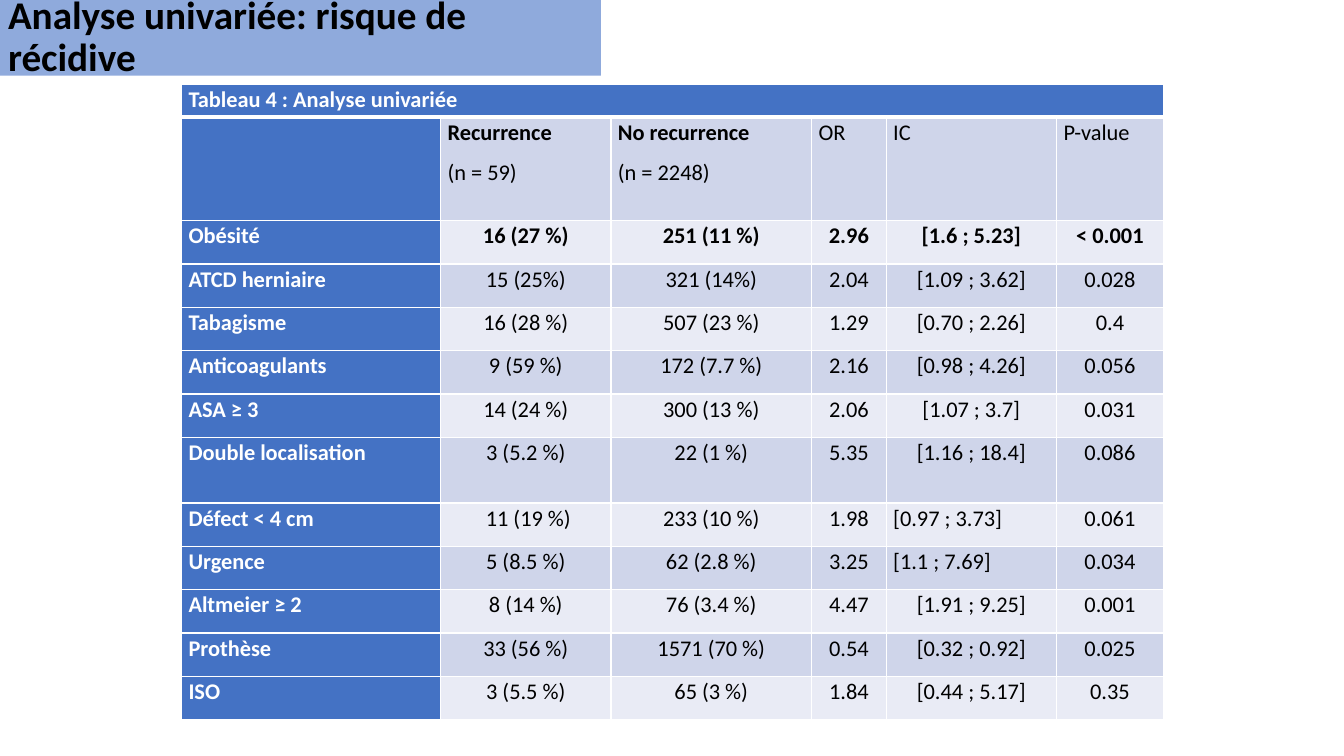
from pptx import Presentation
from pptx.dml.color import RGBColor
from pptx.enum.text import MSO_ANCHOR as Anchor, MSO_AUTO_SIZE as AutoSize, PP_ALIGN as Align
from pptx.oxml.ns import qn
from pptx.util import Inches, Pt
from lxml.etree import SubElement

TITLE = "Analyse univariée: risque de récidive"
CAPTION = "Tableau 4 : Analyse univariée"
HEADERS = ["", "Recurrence\n(n = 59)", "No recurrence\n(n = 2248)", "OR", "IC", "P-value"]
RESULTS = [
    ("Obésité", "16 (27 %)", "251 (11 %)", "2.96", "[1.6 ; 5.23]", "< 0.001"),
    ("ATCD herniaire", "15 (25%)", "321 (14%)", "2.04", "[1.09 ; 3.62]", "0.028"),
    ("Tabagisme", "16 (28 %)", "507 (23 %)", "1.29", "[0.70 ; 2.26]", "0.4"),
    ("Anticoagulants", "9 (59 %)", "172 (7.7 %)", "2.16", "[0.98 ; 4.26]", "0.056"),
    ("ASA ≥ 3", "14 (24 %)", "300 (13 %)", "2.06", "[1.07 ; 3.7]", "0.031"),
    ("Double localisation", "3 (5.2 %)", "22 (1 %)", "5.35", "[1.16 ; 18.4]", "0.086"),
    ("Défect < 4 cm", " 11 (19 %)", "233 (10 %)", "1.98", "[0.97 ; 3.73]", "0.061"),
    ("Urgence", "5 (8.5 %)", "62 (2.8 %)", "3.25", "[1.1 ; 7.69]", "0.034"),
    ("Altmeier ≥ 2", "8 (14 %)", "76 (3.4 %)", "4.47", "[1.91 ; 9.25]", "0.001"),
    ("Prothèse", "33 (56 %)", "1571 (70 %)", "0.54", "[0.32 ; 0.92]", "0.025"),
    ("ISO", "3 (5.5 %)", "65 (3 %)", "1.84", "[0.44 ; 5.17]", "0.35"),
]
SIGNIFICANT = "Obésité"
LEFT_INTERVALS = {"Défect < 4 cm", "Urgence"}
COLUMN_WIDTHS = [2.57, 1.69, 1.99, 0.74, 1.69, 1.06]
CAPTION_HEIGHT, HEADER_HEIGHT, ROW_HEIGHT = 0.32, 1.03, 0.43
TALL_ROWS = {"Double localisation": 0.65}
BLUE, WHITE, BLACK, TITLE_FILL = "4472C4", "FFFFFF", "000000", "8FAADC"
BANDS = ["E9EBF5", "CFD5EA"]
CELL_FORMAT = {"margin_left": Inches(0.07), "margin_right": Inches(0.07),
               "margin_top": 0, "margin_bottom": 0, "vertical_anchor": Anchor.TOP}


def apply(target, values):
    for name, value in values.items():
        setattr(target, name, value)


def paint(fill, color):
    fill.solid()
    fill.fore_color.rgb = RGBColor.from_string(color)


def write(para, text, size, color, bold):
    span = para.add_run()
    span.text = text
    apply(span.font, {"name": "Calibri", "size": Pt(size), "bold": bold})
    span.font.color.rgb = RGBColor.from_string(color)


def add_borders(cell, top, bottom):
    properties = cell._tc.get_or_add_tcPr()
    for side, points in (("L", 1), ("R", 1), ("T", top), ("B", bottom)):
        line = SubElement(properties, qn(f"a:ln{side}"), w=str(Pt(points)))
        SubElement(SubElement(line, qn("a:solidFill")), qn("a:srgbClr"), val=WHITE)


def is_bold(row, column, line):
    if row == 1:
        return column in (1, 2) and line == 0
    return row == 0 or column == 0 or rows[row][0] == SIGNIFICANT


def alignment(row, column):
    left_interval = column == 4 and rows[row][0] in LEFT_INTERVALS
    return Align.LEFT if row < 2 or column == 0 or left_interval else Align.CENTER


deck = Presentation()
apply(deck, {"slide_width": Inches(13.33), "slide_height": Inches(7.5)})
page = deck.slides.add_slide(deck.slide_layouts[5])

rows = [[CAPTION] + [""] * 5, HEADERS, *RESULTS]
heights = [CAPTION_HEIGHT, HEADER_HEIGHT] + [TALL_ROWS.get(row[0], ROW_HEIGHT) for row in RESULTS]
table = page.shapes.add_table(len(rows), len(COLUMN_WIDTHS), Inches(1.8), Inches(0.84),
                              Inches(sum(COLUMN_WIDTHS)), Inches(sum(heights))).table
for column, width in zip(table.columns, COLUMN_WIDTHS):
    column.width = Inches(width)
for table_row, height in zip(table.rows, heights):
    table_row.height = Inches(height)
table.cell(0, 0).merge(table.cell(0, len(COLUMN_WIDTHS) - 1))

for r, texts in enumerate(rows):
    for c, text in enumerate(texts):
        cell = table.cell(r, c)
        on_blue = r == 0 or c == 0
        add_borders(cell, 3 if r == 1 else 1, 3 if r == 0 else 1)
        paint(cell.fill, BLUE if on_blue else BANDS[r % 2])
        apply(cell, CELL_FORMAT)
        for i, line in enumerate(text.split("\n") if text else []):
            para = cell.text_frame.add_paragraph() if i else cell.text_frame.paragraphs[0]
            apply(para, {"alignment": alignment(r, c), "line_spacing": 1.07, "space_after": Pt(8)})
            write(para, line, 16, WHITE if on_blue else BLACK, is_bold(r, c, i))

title = page.shapes.title
apply(title, {"left": Inches(-0.02), "top": 0, "width": Inches(5.98), "height": Inches(0.75)})
paint(title.fill, TITLE_FILL)
apply(title.text_frame, {"word_wrap": True, "auto_size": AutoSize.NONE,
                         "vertical_anchor": Anchor.MIDDLE})
heading = title.text_frame.paragraphs[0]
apply(heading, {"alignment": Align.LEFT, "line_spacing": 0.9, "space_before": Pt(0)})
write(heading, TITLE, 28, BLACK, True)

deck.save("out.pptx")
